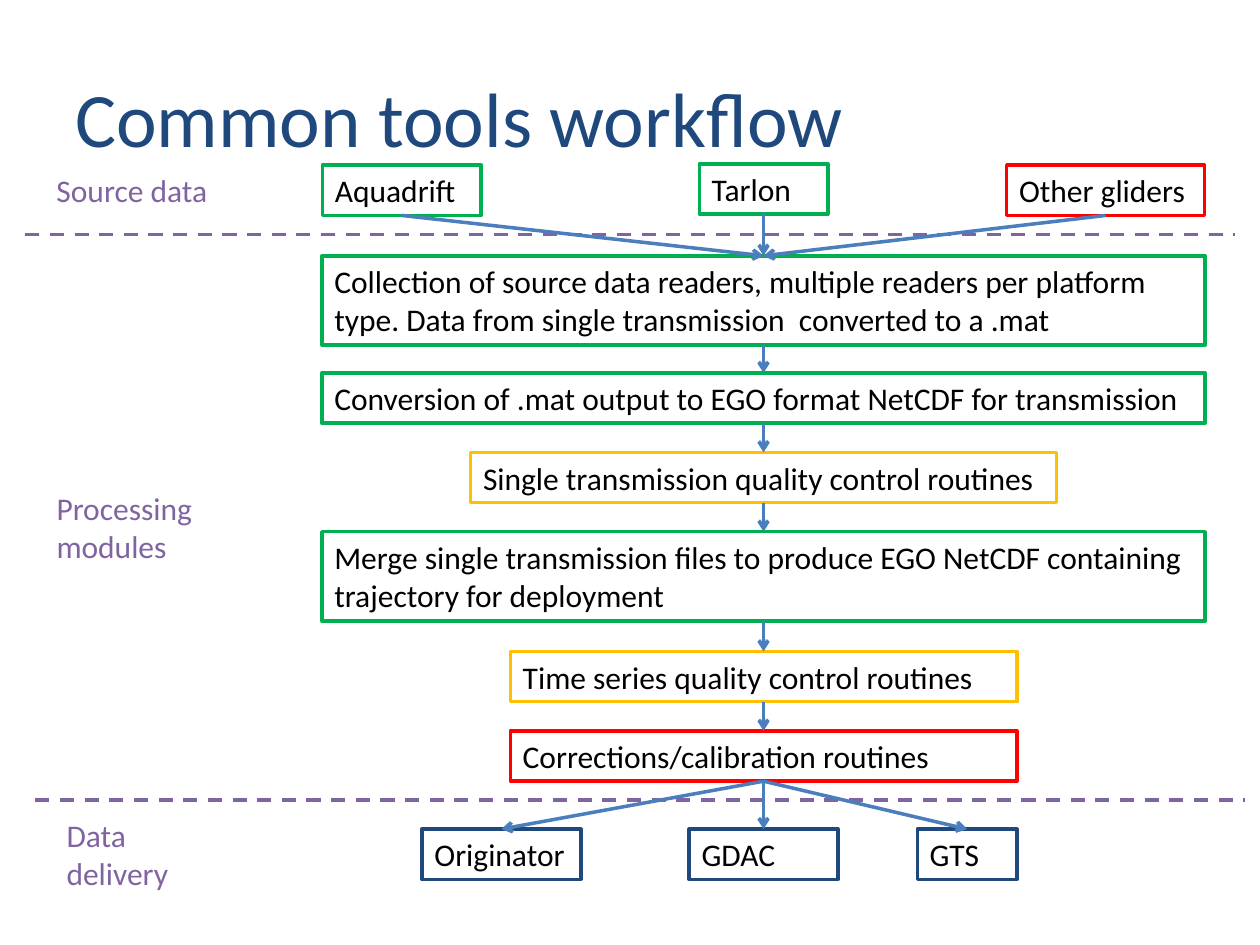
from dataclasses import dataclass

import pptx
import pptx.dml.color
import pptx.enum.dml
import pptx.enum.shapes
import pptx.enum.text
import pptx.oxml.ns
import pptx.util
from lxml import etree
from pptx.dml.color import RGBColor
from pptx.util import Inches

GREEN = RGBColor(0x00, 0xB0, 0x50)
RED = RGBColor(0xFF, 0x00, 0x00)
AMBER = RGBColor(0xFF, 0xC0, 0x00)
NAVY = RGBColor(0x1F, 0x49, 0x7D)
PURPLE = RGBColor(0x80, 0x64, 0xA2)
BLUE = RGBColor(0x4B, 0x7E, 0xBC)
BLACK = RGBColor(0x00, 0x00, 0x00)

FLOW_CENTRE = 6.06
ONE_LINE, TWO_LINES = 0.4, 0.71
WIDE = 7.01


@dataclass(frozen=True)
class Step:
    text: str
    left: float
    top: float
    width: float
    color: RGBColor
    height: float = ONE_LINE


@dataclass(frozen=True)
class Label:
    lines: tuple[str, ...]
    left: float
    top: float
    width: float
    height: float
    size: int = 18
    color: RGBColor = PURPLE


def module(text: str, top: float, width: float, color: RGBColor,
           height: float = ONE_LINE) -> Step:
    """A processing step centred on the flow."""
    return Step(text, FLOW_CENTRE - width / 2, top, width, color, height)


SOURCES = [
    Step("Aquadrift", 2.56, 1.31, 1.26, GREEN),
    Step("Tarlon", 5.55, 1.3, 1.02, GREEN),
    Step("Other gliders", 7.99, 1.31, 1.57, RED),
]
MODULES = [
    module("Collection of source data readers, multiple readers per platform type. "
           "Data from single transmission  converted to a .mat",
           2.03, WIDE, GREEN, TWO_LINES),
    module("Conversion of .mat output to EGO format NetCDF for transmission",
           2.96, WIDE, GREEN),
    module("Single transmission quality control routines", 3.59, 4.65, AMBER),
    module("Merge single transmission files to produce EGO NetCDF containing "
           "trajectory for deployment", 4.22, WIDE, GREEN, TWO_LINES),
    module("Time series quality control routines", 5.17, 4.02, AMBER),
    module("Corrections/calibration routines", 5.8, 4.02, RED),
]
DELIVERIES = [
    Step("Originator", 3.35, 6.58, 1.26, NAVY),
    Step("GDAC", 5.47, 6.58, 1.18, NAVY),
    Step("GTS", 7.28, 6.58, 0.79, NAVY),
]
TITLE = Label(("Common tools workflow",), 0.5, 0.3, 9, 1.25, 44, NAVY)
STAGES = [
    Label(("Source data",), 0.35, 1.31, 1.97, ONE_LINE),
    Label(("Processing", "modules"), 0.35, 3.83, 1.29, TWO_LINES),
    Label(("Data", "delivery"), 0.43, 6.43, 1.02, TWO_LINES),
]
DIVIDERS = [(0.2, 1.86), (0.28, 6.35)]
DIVIDER_LENGTH = 9.6


def write(frame, lines: tuple[str, ...], size: int, color: RGBColor, anchor) -> None:
    frame.word_wrap = True
    frame.vertical_anchor = anchor
    frame.text = "\n".join(lines)
    for para in frame.paragraphs:
        para.alignment = pptx.enum.text.PP_ALIGN.LEFT
        para.font.name = "Calibri"
        para.font.size = pptx.util.Pt(size)
        para.font.color.rgb = color


def add_label(page, label: Label, anchor=pptx.enum.text.MSO_ANCHOR.TOP) -> None:
    box = page.shapes.add_textbox(Inches(label.left), Inches(label.top),
                                  Inches(label.width), Inches(label.height))
    write(box.text_frame, label.lines, label.size, label.color, anchor)


def add_step(page, step: Step):
    box = page.shapes.add_shape(
        pptx.enum.shapes.MSO_SHAPE.RECTANGLE, Inches(step.left), Inches(step.top),
        Inches(step.width), Inches(step.height))
    box.shadow.inherit = False
    box.fill.background()
    box.line.color.rgb = step.color
    box.line.width = pptx.util.Pt(2)
    write(box.text_frame, (step.text,), 18, BLACK, pptx.enum.text.MSO_ANCHOR.TOP)
    return box


def add_line(page, left: float, top: float, length: float, color: RGBColor):
    line = page.shapes.add_connector(
        pptx.enum.shapes.MSO_CONNECTOR.STRAIGHT, Inches(left), Inches(top),
        Inches(left + length), Inches(top))
    line.line.color.rgb = color
    line.line.width = pptx.util.Pt(2)
    etree.SubElement(line._element.spPr, pptx.oxml.ns.qn("a:effectLst"))
    return line


def add_divider(page, left: float, top: float) -> None:
    line = add_line(page, left, top, DIVIDER_LENGTH, PURPLE)
    line.line.dash_style = pptx.enum.dml.MSO_LINE.DASH


def add_arrow(page, upper, lower) -> None:
    """Join the bottom of the upper box to the top of the lower one."""
    arrow = add_line(page, 0, 0, 0, BLUE)
    arrow.begin_connect(upper, 2)
    arrow.end_connect(lower, 0)
    etree.SubElement(arrow.line._get_or_add_ln(), pptx.oxml.ns.qn("a:tailEnd"),
                     type="arrow")


def main() -> None:
    deck = pptx.Presentation()
    deck.slide_width, deck.slide_height = Inches(10), Inches(7.5)
    page = deck.slides.add_slide(deck.slide_layouts[6])

    add_label(page, TITLE, pptx.enum.text.MSO_ANCHOR.MIDDLE)
    for stage in STAGES:
        add_label(page, stage)
    for left, top in DIVIDERS:
        add_divider(page, left, top)

    sources, modules, deliveries = (
        [add_step(page, step) for step in row]
        for row in (SOURCES, MODULES, DELIVERIES))
    links = [(source, modules[0]) for source in sources]
    links += zip(modules, modules[1:])
    links += [(modules[-1], delivery) for delivery in deliveries]
    for upper, lower in links:
        add_arrow(page, upper, lower)

    deck.save("out.pptx")


if __name__ == "__main__":
    main()
